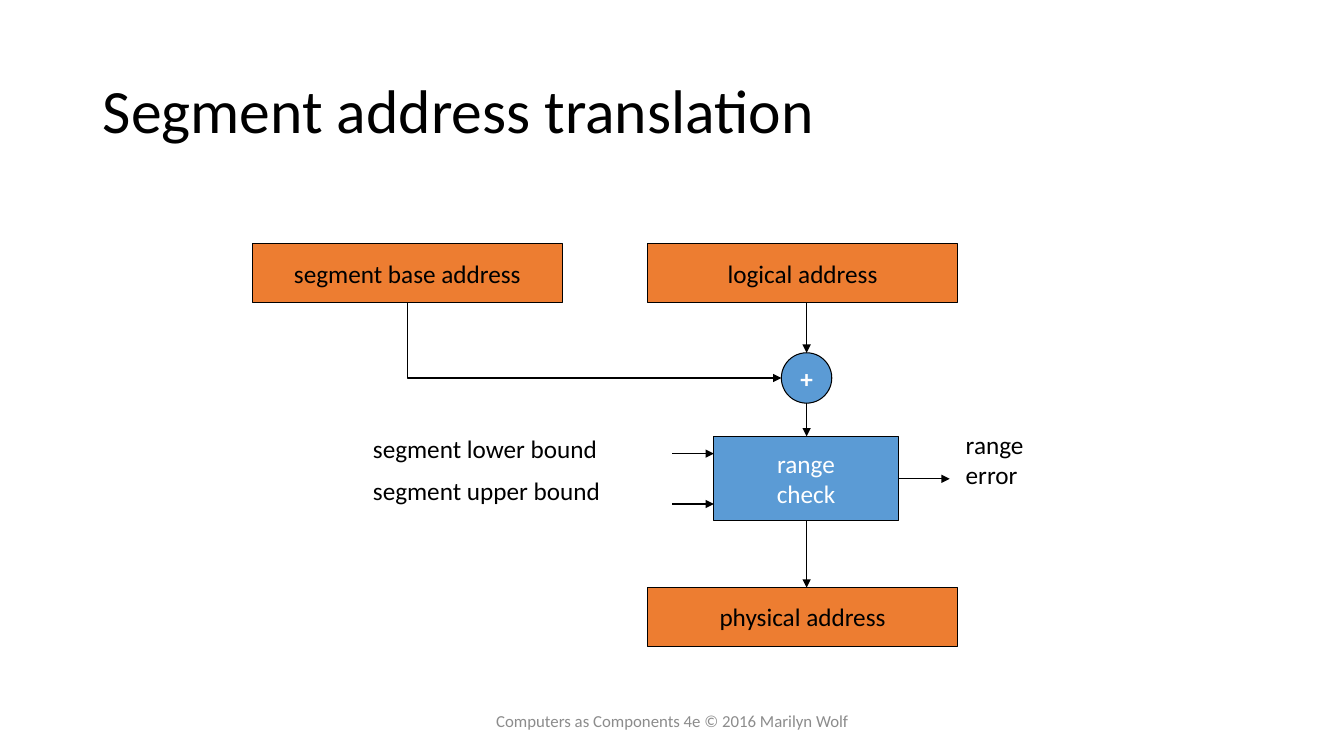
import pptx
import pptx.util
import pptx.dml.color
import pptx.enum.shapes
import pptx.enum.text
import pptx.oxml
import pptx.oxml.ns

Inches = pptx.util.Inches
Pt = pptx.util.Pt
RGBColor = pptx.dml.color.RGBColor
SHAPE = pptx.enum.shapes.MSO_SHAPE
CONNECTOR = pptx.enum.shapes.MSO_CONNECTOR
ALIGN = pptx.enum.text.PP_ALIGN
ANCHOR = pptx.enum.text.MSO_ANCHOR

BLACK = RGBColor(0x00, 0x00, 0x00)
WHITE = RGBColor(0xFF, 0xFF, 0xFF)
ORANGE = RGBColor(0xED, 0x7D, 0x31)
BLUE = RGBColor(0x5B, 0x9B, 0xD5)
GRAY = RGBColor(0x8C, 0x8C, 0x8C)


def write(frame, text, size, color, align, anchor, wrap=False, bold=False):
    frame.text = text
    frame.word_wrap = wrap
    frame.vertical_anchor = anchor
    for paragraph in frame.paragraphs:
        paragraph.alignment = align
        paragraph.font.name = "Calibri"
        paragraph.font.size = Pt(size)
        paragraph.font.bold = bold
        paragraph.font.color.rgb = color


def add_arrow(kind, x1, y1, x2, y2):
    arrow = slide.shapes.add_connector(
        kind, Inches(x1), Inches(y1), Inches(x2), Inches(y2))
    arrow.line.color.rgb = BLACK
    arrow.line.width = Pt(0.75)
    properties = arrow._element.spPr
    head = pptx.oxml.parse_xml(
        f'<a:tailEnd {pptx.oxml.ns.nsdecls("a")} type="triangle"/>')
    properties.find(pptx.oxml.ns.qn("a:ln")).append(head)
    properties.append(pptx.oxml.parse_xml(
        f'<a:effectLst {pptx.oxml.ns.nsdecls("a")}/>'))
    return arrow


presentation = pptx.Presentation()
presentation.slide_width = Inches(13.33)
presentation.slide_height = Inches(7.5)
slide = presentation.slides.add_slide(presentation.slide_layouts[5])

# Title
title = slide.shapes.title
title.left, title.top = Inches(0.92), Inches(0.4)
title.width, title.height = Inches(11.5), Inches(1.45)
write(title.text_frame, "Segment address translation", 44, BLACK,
      ALIGN.LEFT, ANCHOR.MIDDLE, wrap=True)
title.text_frame.paragraphs[0].line_spacing = 0.9

# Addresses, range check and adder
blocks = [
    (SHAPE.RECTANGLE, "segment base address", 2.5, 2.42, 3.08, 0.58, ORANGE, BLACK),
    (SHAPE.RECTANGLE, "logical address", 6.42, 2.42, 3.08, 0.58, ORANGE, BLACK),
    (SHAPE.RECTANGLE, "range\ncheck", 7.08, 4.33, 1.83, 0.83, BLUE, WHITE),
    (SHAPE.RECTANGLE, "physical address", 6.42, 5.83, 3.08, 0.58, ORANGE, BLACK),
    (SHAPE.OVAL, "+", 7.75, 3.5, 0.5, 0.5, BLUE, WHITE),
]
for outline, text, left, top, width, height, fill, color in blocks:
    block = slide.shapes.add_shape(
        outline, Inches(left), Inches(top), Inches(width), Inches(height))
    block.shadow.inherit = False
    block.fill.solid()
    block.fill.fore_color.rgb = fill
    block.line.color.rgb = BLACK
    block.line.width = Pt(0.75)
    write(block.text_frame, text, 18, color, ALIGN.CENTER, ANCHOR.MIDDLE,
          bold=text == "+")

# Straight data flow
for ends in [
    (8, 3, 8, 3.5),
    (8, 4, 8, 4.33),
    (6.67, 4.5, 7.08, 4.5),
    (6.67, 5, 7.08, 5),
    (8, 5.17, 8, 5.83),
    (8.92, 4.75, 9.42, 4.75),
]:
    add_arrow(CONNECTOR.STRAIGHT, *ends)

# Base address to adder: a one-corner elbow, turned to go down and then right
base_flow = add_arrow(CONNECTOR.ELBOW, 6.27, 1.52, 5.52, 5.23)
base_geometry = base_flow._element.spPr
base_geometry.find(pptx.oxml.ns.qn("a:prstGeom")).set("prst", "bentConnector2")
base_geometry.find(pptx.oxml.ns.qn("a:xfrm")).set("rot", str(270 * 60000))

# Bounds, error and footer labels
labels = [
    ("range\nerror", 9.48, 4.21, 0.78, 0.71, 18, BLACK, ALIGN.LEFT, ANCHOR.TOP, False),
    ("segment lower bound", 3.6, 4.25, 2.45, 0.4, 18, BLACK, ALIGN.LEFT, ANCHOR.TOP, False),
    ("segment upper bound", 3.6, 4.67, 2.48, 0.4, 18, BLACK, ALIGN.LEFT, ANCHOR.TOP, False),
    ("Computers as Components 4e © 2016 Marilyn Wolf", 4.42, 6.95, 4.5, 0.4,
     12, GRAY, ALIGN.CENTER, ANCHOR.MIDDLE, True),
]
for text, left, top, width, height, size, color, align, anchor, wrap in labels:
    label = slide.shapes.add_textbox(
        Inches(left), Inches(top), Inches(width), Inches(height))
    write(label.text_frame, text, size, color, align, anchor, wrap)

presentation.save("out.pptx")
